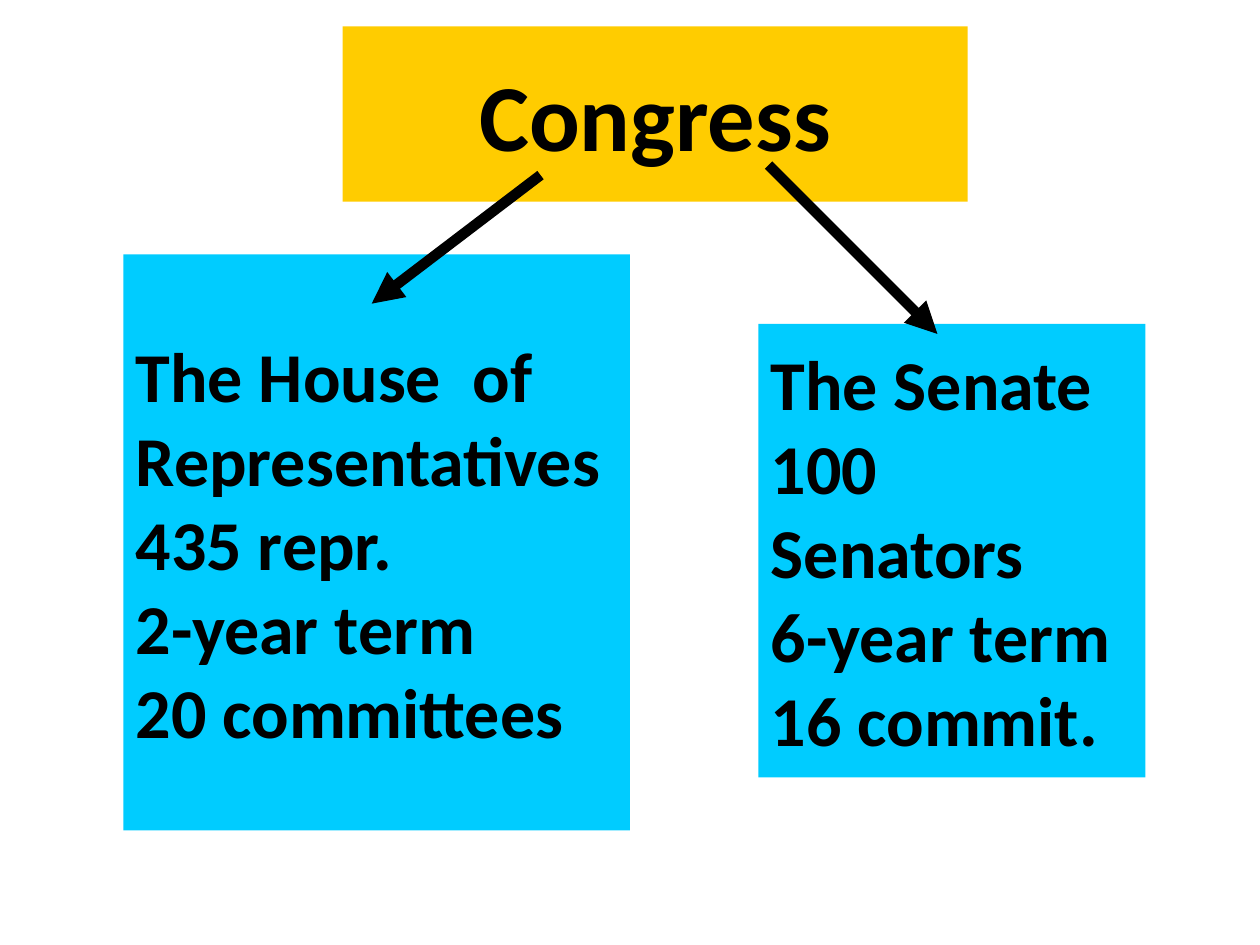
from lxml import etree
from pptx import Presentation
from pptx.dml.color import RGBColor
from pptx.enum.shapes import MSO_CONNECTOR, MSO_SHAPE
from pptx.enum.text import MSO_ANCHOR, MSO_AUTO_SIZE, PP_ALIGN
from pptx.oxml.ns import qn
from pptx.util import Inches, Pt

RECTANGLE = MSO_SHAPE.RECTANGLE
STRAIGHT = MSO_CONNECTOR.STRAIGHT
MIDDLE = MSO_ANCHOR.MIDDLE
NO_AUTOFIT = MSO_AUTO_SIZE.NONE
LEFT, CENTER = PP_ALIGN.LEFT, PP_ALIGN.CENTER
TITLE_ONLY = 5
FONT = "Calibri"
COLORS = {"congress": "FFCC00", "chamber": "00CCFF", "ink": "000000"}

HOUSE = ["The House  of", "Representatives", "435 repr.", "2-year term", "20 committees"]
SENATE = ["The Senate", "100", "Senators", "6-year term", "16 commit."]
CHAMBERS = [
    (HOUSE, (0.98, 2.02, 4.02, 4.57)),
    (SENATE, (6.02, 2.57, 3.07, 3.6)),
]
BRANCHES = [((4.29, 1.39), (2.95, 2.41)), ((6.1, 1.31), (7.44, 2.65))]


def paint(fill, color):
    """Give a fill one of the named colours."""
    fill.solid()
    fill.fore_color.rgb = RGBColor.from_string(COLORS[color])


def write_lines(frame, lines, size, align):
    """Write bold lines, one paragraph each, centred vertically."""
    frame.word_wrap = True
    frame.auto_size = NO_AUTOFIT
    frame.vertical_anchor = MIDDLE
    for index, line in enumerate(lines):
        paragraph = frame.add_paragraph() if index else frame.paragraphs[0]
        paragraph.alignment = align
        run = paragraph.add_run()
        run.text = line
        run.font.name = FONT
        run.font.size = Pt(size)
        run.font.bold = True
        paint(run.font.fill, "ink")


def place_title(slide, heading, box):
    """Move the title placeholder and format it as the top box."""
    title = slide.shapes.title
    title.left, title.top, title.width, title.height = map(Inches, box)
    paint(title.fill, "congress")
    write_lines(title.text_frame, [heading], 54, CENTER)


def add_chamber(slide, facts, box):
    """Add the box of facts for one chamber."""
    chamber = slide.shapes.add_shape(RECTANGLE, *map(Inches, box))
    chamber.shadow.inherit = False
    paint(chamber.fill, "chamber")
    chamber.line.fill.background()
    write_lines(chamber.text_frame, facts, 40, LEFT)


def add_branch(slide, start, end):
    """Add an arrow from Congress to a chamber."""
    branch = slide.shapes.add_connector(STRAIGHT, *map(Inches, start + end))
    branch.line.width = Pt(6)
    paint(branch.line.fill, "ink")
    etree.SubElement(branch.line.fill._xPr, qn("a:tailEnd"), type="triangle")
    etree.SubElement(branch._element.spPr, qn("a:effectLst"))


def main():
    """Build the slide on the two chambers of Congress."""
    deck = Presentation()
    deck.slide_width, deck.slide_height = Inches(10), Inches(7.5)
    slide = deck.slides.add_slide(deck.slide_layouts[TITLE_ONLY])
    place_title(slide, "Congress", (2.72, 0.21, 4.96, 1.39))
    for facts, box in CHAMBERS:
        add_chamber(slide, facts, box)
    for start, end in BRANCHES:
        add_branch(slide, start, end)
    deck.save("out.pptx")


if __name__ == "__main__":
    main()
